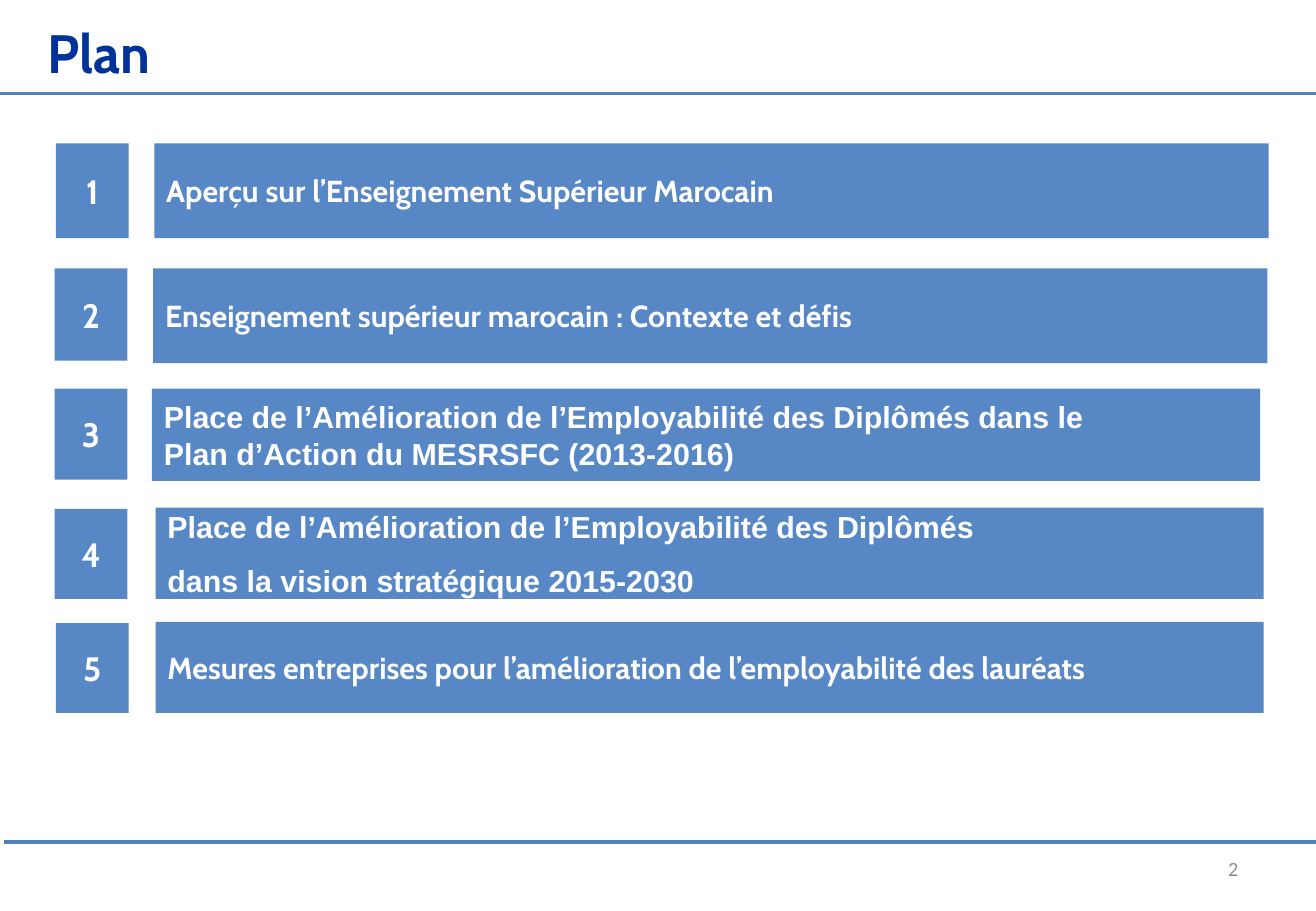
"""Build the "Plan" agenda slide with five numbered sections."""
from dataclasses import dataclass

import lxml.etree
import pptx
import pptx.dml.color
import pptx.enum.shapes
import pptx.enum.text
import pptx.oxml.ns
import pptx.util

PX = 9144
PAGE_WIDTH, PAGE_HEIGHT = 1083, 750
COLOURS = {"panel": "5788C5", "rule": "4F81BD", "title": "003399", "white": "FFFFFF", "number": "8C8C8C"}
ALIGN = pptx.enum.text.PP_ALIGN
ANCHOR = pptx.enum.text.MSO_ANCHOR


@dataclass(frozen=True)
class Area:
    left: int
    top: int
    width: int
    height: int

    def emu(self) -> list[int]:
        return [value * PX for value in (self.left, self.top, self.width, self.height)]


@dataclass(frozen=True)
class Section:
    badge: Area
    panel: Area
    lines: tuple[str, ...]
    font: str = "Cabin"
    last_spacing: float = 1.0


@dataclass(frozen=True)
class Style:
    font: str
    size: int
    colour: str
    bold: bool = True
    align: ALIGN = ALIGN.LEFT


SECTIONS = (
    Section(Area(46, 118, 60, 78), Area(127, 118, 917, 78),
            ("Aperçu sur l’Enseignement Supérieur Marocain",)),
    Section(Area(45, 221, 60, 76), Area(126, 221, 917, 78),
            ("Enseignement supérieur marocain : Contexte et défis",)),
    Section(Area(45, 320, 60, 75), Area(125, 320, 912, 76),
            ("Place de l’Amélioration de l’Employabilité des Diplômés dans le",
             "Plan d’Action du MESRSFC (2013-2016)"), "Arial"),
    Section(Area(45, 419, 60, 74), Area(128, 418, 912, 75),
            ("Place de l’Amélioration de l’Employabilité des Diplômés",
             "dans la vision stratégique 2015-2030"), "Arial", 1.5),
    Section(Area(46, 513, 60, 74), Area(128, 512, 912, 75),
            ("Mesures entreprises pour l’amélioration de l’employabilité des lauréats",)),
)


def colour(name: str) -> pptx.dml.color.RGBColor:
    return pptx.dml.color.RGBColor.from_string(COLOURS[name])


def write(frame, lines: tuple[str, ...], style: Style, anchor: ANCHOR = ANCHOR.MIDDLE) -> None:
    frame.word_wrap = True
    frame.auto_size = pptx.enum.text.MSO_AUTO_SIZE.NONE
    frame.vertical_anchor = anchor
    for index, line in enumerate(lines):
        para = frame.add_paragraph() if index else frame.paragraphs[0]
        para.alignment = style.align
        span = para.add_run()
        span.text = line
        span.font.name = style.font
        span.font.size = pptx.util.Pt(style.size)
        span.font.bold = style.bold
        span.font.color.rgb = colour(style.colour)


def add_rule(page, top: int, left: int) -> None:
    rule = page.shapes.add_connector(
        pptx.enum.shapes.MSO_CONNECTOR.STRAIGHT, left * PX, top * PX, PAGE_WIDTH * PX, top * PX)
    rule.line.color.rgb = colour("rule")
    rule.line.width = pptx.util.Pt(2.25)
    lxml.etree.SubElement(rule._element.spPr, pptx.oxml.ns.qn("a:effectLst"))


def add_panel(page, area: Area, lines: tuple[str, ...], style: Style):
    panel = page.shapes.add_shape(pptx.enum.shapes.MSO_SHAPE.RECTANGLE, *area.emu())
    panel.shadow.inherit = False
    panel.fill.solid()
    panel.fill.fore_color.rgb = colour("panel")
    panel.line.fill.background()
    write(panel.text_frame, lines, style)
    return panel


def add_section(page, number: int, section: Section) -> None:
    add_panel(page, section.badge, (str(number),), Style("Cabin", 20, "white", align=ALIGN.CENTER))
    panel = add_panel(page, section.panel, section.lines, Style(section.font, 18, "white"))
    panel.text_frame.paragraphs[-1].line_spacing = section.last_spacing


def add_title(page) -> None:
    title = page.shapes.title
    title.left, title.top, title.width, title.height = Area(0, 11, PAGE_WIDTH, 63).emu()
    write(title.text_frame, ("Plan",), Style("Cabin", 32, "title"), ANCHOR.TOP)
    title.text_frame.paragraphs[0]._p.get_or_add_pPr().set("marL", str(29 * PX))


def main() -> None:
    deck = pptx.Presentation()
    deck.slide_width, deck.slide_height = PAGE_WIDTH * PX, PAGE_HEIGHT * PX
    page = deck.slides.add_slide(deck.slide_layouts[5])
    add_title(page)
    add_rule(page, top=77, left=0)
    add_rule(page, top=693, left=3)
    for number, section in enumerate(SECTIONS, start=1):
        add_section(page, number, section)
    page_number = page.shapes.add_textbox(*Area(776, 695, 253, 40).emu())
    write(page_number.text_frame, ("2",), Style("Calibri", 12, "number", bold=False, align=ALIGN.RIGHT))
    deck.save("out.pptx")


if __name__ == "__main__":
    main()
